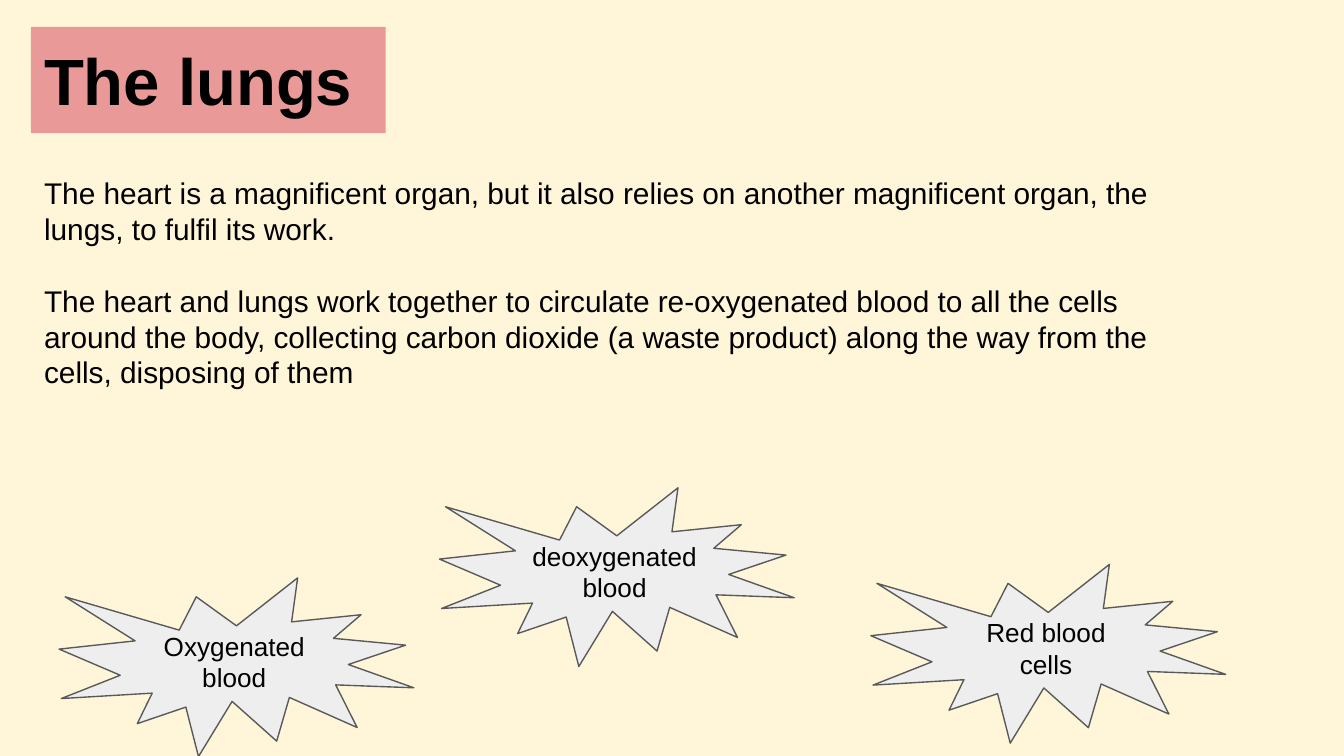
from pptx import Presentation
from pptx.dml.color import RGBColor
from pptx.enum import shapes, text
from pptx.util import Inches, Pt

FONT = {"name": "Arial", "size": Pt(16), "bold": False}
BURST_SIZE = (2.64, 1.33)
BURSTS = [
    ("Oxygenated blood", 0.44, 4.3),
    ("deoxygenated blood", 3.27, 3.63),
    ("Red blood cells", 6.48, 4.2),
]
BODY = [
    "The heart is a magnificent organ, but it also relies on another "
    "magnificent organ, the lungs, to fulfil its work.",
    "The heart and lungs work together to circulate re-oxygenated blood to "
    "all the cells around the body, collecting carbon dioxide (a waste "
    "product) along the way from the cells, disposing of them",
]


def color(value):
    return RGBColor.from_string(value)


def paint(fill, value):
    fill.solid()
    fill.fore_color.rgb = color(value)


def write(box, lines, size, bold=False, gap=0, align=text.PP_ALIGN.LEFT,
          anchor=text.MSO_ANCHOR.TOP):
    frame = box.text_frame
    layout = {"word_wrap": True, "vertical_anchor": anchor}
    for side in ("left", "top", "right", "bottom"):
        layout[f"margin_{side}"] = Inches(0.1)
    for name, value in layout.items():
        setattr(frame, name, value)
    for index, line in enumerate(lines):
        para = frame.add_paragraph() if index else frame.paragraphs[0]
        para.alignment = align
        para.space_before = Pt(gap if index else 0)
        span = para.add_run()
        span.text = line
        for name, value in {**FONT, "size": Pt(size), "bold": bold}.items():
            setattr(span.font, name, value)
        span.font.color.rgb = color("000000")


def add_shape(page, kind, place, fill, line=None):
    shape = page.shapes.add_shape(kind, *map(Inches, place))
    shape.shadow.inherit = False
    paint(shape.fill, fill)
    if line:
        shape.line.color.rgb = color(line)
        shape.line.width = Pt(0.75)
    else:
        shape.line.fill.background()
    return shape


def add_burst(page, label, left, top):
    burst = add_shape(page, shapes.MSO_SHAPE.EXPLOSION1,
                      (left, top, *BURST_SIZE), "EEEEEE", "595959")
    write(burst, [label], 14, align=text.PP_ALIGN.CENTER,
          anchor=text.MSO_ANCHOR.MIDDLE)


def main():
    # Widescreen page, 16:9
    deck = Presentation()
    deck.slide_width = Inches(10)
    deck.slide_height = Inches(10) * 9 // 16
    page = deck.slides.add_slide(deck.slide_layouts[6])
    paint(page.background.fill, "FFF6DA")

    # Title
    title = add_shape(page, shapes.MSO_SHAPE.RECTANGLE,
                      (0.23, 0.2, 2.64, 0.79), "EA9999")
    write(title, ["The lungs"], 35, bold=True)

    # Body text, with one line's height between paragraphs
    body = page.shapes.add_textbox(*map(Inches, (0.23, 1.2, 8.66, 1.82)))
    write(body, BODY, 16, gap=19.3)

    # Key terms
    for label, left, top in BURSTS:
        add_burst(page, label, left, top)

    deck.save("out.pptx")


if __name__ == "__main__":
    main()
